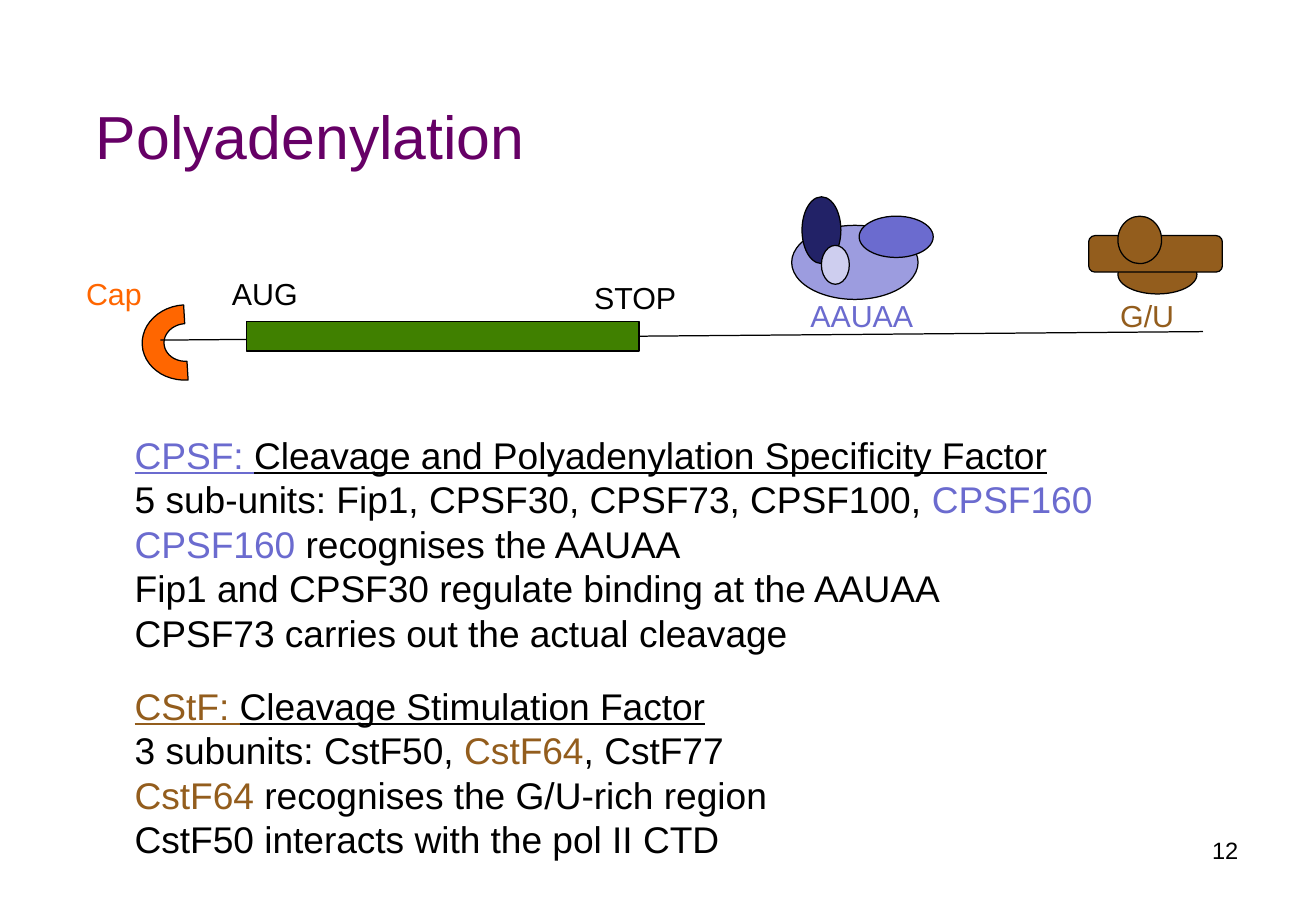
import math

from lxml import etree
from pptx import Presentation
from pptx.dml.color import RGBColor
from pptx.enum import shapes, text
from pptx.oxml import ns
from pptx.util import Inches, Pt

COLOURS = {
    "black": "000000",
    "title": "660066",
    "cap": "FF6600",
    "coding": "408000",
    "cpsf": "6B6BCF",
    "cpsf_light": "9C9CDF",
    "cpsf_pale": "CECEEF",
    "cpsf_dark": "222267",
    "cstf": "935D1D",
}
OVAL = shapes.MSO_SHAPE.OVAL
LINE_WIDTH = Pt(0.75)
LINE_SPACING = 1.2  # line height as a multiple of the text size
CAP_SAMPLES = 24


def colour(name):
    return RGBColor.from_string(COLOURS[name])


def add_run(paragraph, wording, size=18, tint="black", underline=False):
    run = paragraph.add_run()
    run.text = wording
    run.font.name = "Arial"
    run.font.size = Pt(size)
    run.font.color.rgb = colour(tint)
    if underline:
        run.font.underline = True


def add_text(slide, box, lines, size=18, align=text.PP_ALIGN.LEFT, wrap=False, gaps=None):
    """Each line is a list of (wording, tint, underline); gaps maps line index to points."""
    frame = slide.shapes.add_textbox(*map(Inches, box)).text_frame
    frame.word_wrap = wrap
    for index, runs in enumerate(lines):
        paragraph = frame.paragraphs[0] if index == 0 else frame.add_paragraph()
        paragraph.alignment = align
        paragraph.line_spacing = Pt(size * LINE_SPACING)
        paragraph.space_before = Pt((gaps or {}).get(index, 0))
        for wording, tint, underline in runs:
            add_run(paragraph, wording, size, tint, underline)


def style(shape, fill):
    shape.shadow.inherit = False
    shape.fill.solid()
    shape.fill.fore_color.rgb = colour(fill)
    shape.line.color.rgb = colour("black")
    shape.line.width = LINE_WIDTH


def add_part(slide, kind, box, fill, rotation=0):
    shape = slide.shapes.add_shape(kind, *map(Inches, box))
    shape.rotation = rotation
    style(shape, fill)


def add_cap(slide, centre=(1.53, 2.82), outer=(0.36, 0.31), inner=(0.18, 0.155), tilt=-3.4):
    """Half ring that opens to the right, slightly tilted."""
    sine, cosine = math.sin(math.radians(tilt)), math.cos(math.radians(tilt))

    def arc(radii):
        points = []
        for step in range(CAP_SAMPLES + 1):
            angle = math.pi * (0.5 + step / CAP_SAMPLES)
            across, down = radii[0] * math.cos(angle), radii[1] * math.sin(angle)
            points.append((Inches(centre[0] + across * cosine - down * sine),
                           Inches(centre[1] + across * sine + down * cosine)))
        return points

    outline = arc(outer) + arc(inner)[::-1]
    builder = slide.shapes.build_freeform(*outline[0])
    builder.add_line_segments(outline[1:], close=True)
    style(builder.convert_to_shape(), "cap")


def add_strand(slide, start, end):
    strand = slide.shapes.add_connector(
        shapes.MSO_CONNECTOR.STRAIGHT, *map(Inches, start + end))
    strand.line.color.rgb = colour("black")
    strand.line.width = LINE_WIDTH
    properties = strand.element.find(ns.qn("p:spPr"))
    etree.SubElement(properties, ns.qn("a:effectLst"))


def main():
    presentation = Presentation()
    presentation.slide_width = Inches(10.83)
    presentation.slide_height = Inches(7.5)
    slide = presentation.slides.add_slide(presentation.slide_layouts[6])

    # Factor descriptions
    factors = [
        [("CPSF: ", "cpsf", True),
         ("Cleavage and Polyadenylation Specificity Factor", "black", True)],
        [("5 sub-units: Fip1, CPSF30, CPSF73, CPSF100, ", "black", False),
         ("CPSF160", "cpsf", False)],
        [("CPSF160 ", "cpsf", False), ("recognises the AAUAA", "black", False)],
        [("Fip1 and CPSF30 regulate binding at the AAUAA", "black", False)],
        [("CPSF73 carries out the actual cleavage", "black", False)],
        [("CStF: ", "cstf", True), ("Cleavage Stimulation Factor", "black", True)],
        [("3 subunits: CstF50, ", "black", False), ("CstF64", "cstf", False),
         (", CstF77", "black", False)],
        [("CstF64 ", "cstf", False), ("recognises the G/U-rich region", "black", False)],
        [("CstF50 interacts with the pol II CTD", "black", False)],
    ]
    add_text(slide, (1.01, 3.51, 8.18, 3.8), factors, size=22, gaps={5: 16.8})

    # Messenger RNA: cap, strand and coding region
    add_cap(slide)
    add_strand(slide, (1.32, 2.8), (9.9, 2.73))
    add_part(slide, shapes.MSO_SHAPE.RECTANGLE, (2.03, 2.65, 3.23, 0.24), "coding")

    # Labels along the strand
    for wording, left, top, width, tint in [
        ("AAUAA", 6.57, 2.4, 1.06, "cpsf"),
        ("STOP", 4.79, 2.25, 0.89, "black"),
        ("AUG", 1.81, 2.22, 0.75, "black"),
        ("Cap", 0.61, 2.22, 0.66, "cap"),
        ("G/U", 9.12, 2.4, 0.65, "cstf"),
    ]:
        add_text(slide, (left, top, width, 0.4), [[(wording, tint, False)]])

    # CPSF complex, then CStF complex
    add_part(slide, OVAL, (6.73, 1.64, 0.61, 1.04), "cpsf_light", rotation=90)
    add_part(slide, OVAL, (6.6, 1.62, 0.32, 0.55), "cpsf_dark")
    add_part(slide, OVAL, (6.76, 2.02, 0.23, 0.32), "cpsf_pale")
    add_part(slide, OVAL, (7.07, 1.78, 0.61, 0.34), "cpsf")
    add_part(slide, OVAL, (9.2, 2.1, 0.65, 0.32), "cstf")
    add_part(slide, shapes.MSO_SHAPE.ROUNDED_RECTANGLE, (8.96, 1.94, 1.1, 0.3), "cstf")
    add_part(slide, OVAL, (9.2, 1.78, 0.36, 0.39), "cstf")

    # Title and slide number
    add_text(slide, (0.69, 0.76, 3.77, 0.71), [[("Polyadenylation", "title", False)]], size=36)
    add_text(slide, (7.76, 6.83, 2.53, 0.52), [[("12", "black", False)]], size=14,
             align=text.PP_ALIGN.RIGHT, wrap=True)

    presentation.save("out.pptx")


if __name__ == "__main__":
    main()
